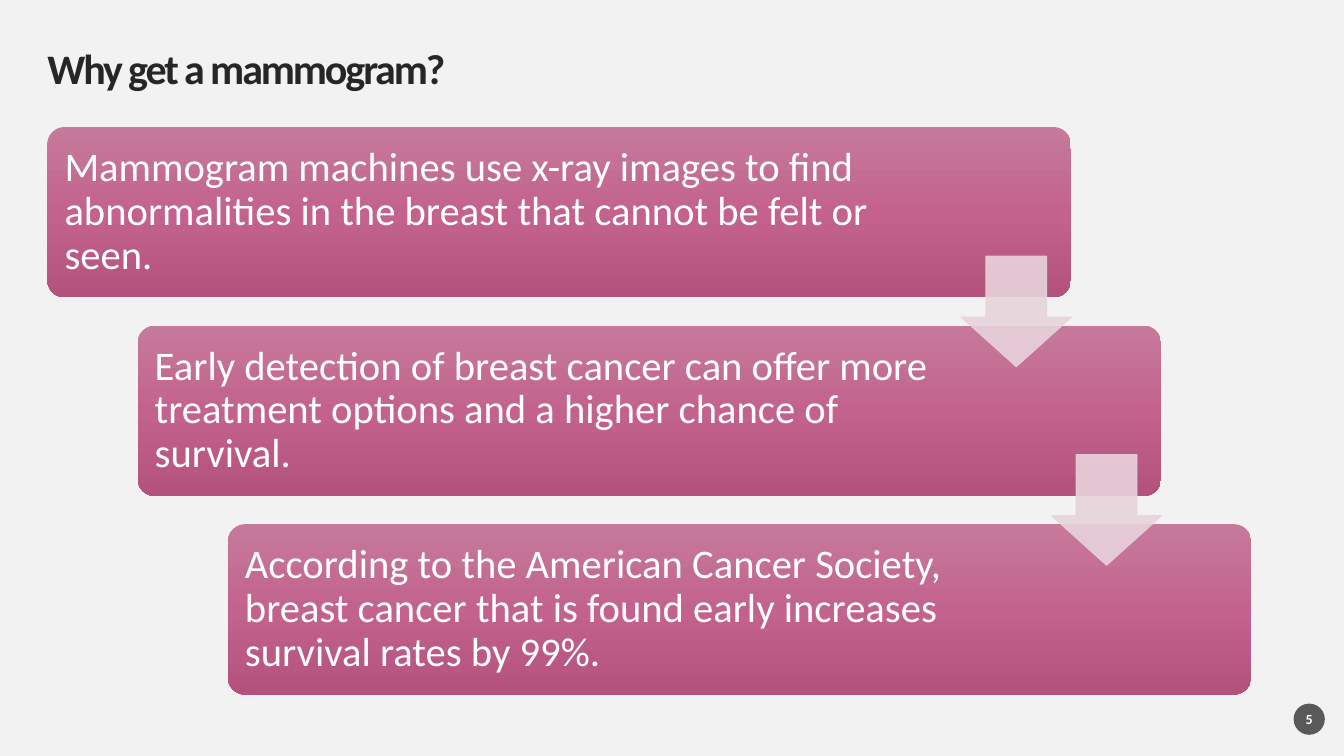
from copy import deepcopy

from pptx import Presentation
from pptx.dml.color import RGBColor
from pptx.enum.shapes import MSO_SHAPE
from pptx.enum.text import MSO_ANCHOR, PP_ALIGN
from pptx.oxml.ns import qn
from pptx.oxml.xmlchemy import OxmlElement
from pptx.util import Inches, Pt

TITLE = "Why get a mammogram?"
PAGE_NUMBER = "5"
REASONS = [
    ("Mammogram machines use x-ray images to find abnormalities in the breast "
     "that cannot be felt or seen.", 8.33),
    ("Early detection of breast cancer can offer more treatment options and a "
     "higher chance of survival.", 8.06),
    ("According to the American Cancer Society, breast cancer that is found early "
     "increases survival rates by 99%.", 8.06),
]
COLORS = {
    "background": "F2F2F2", "title": "262626", "badge": "595959", "white": "FFFFFF",
    "card_top": "C67A9B", "card_middle": "C3638D", "card_bottom": "B3537D",
    "arrow": "E8D3DB",
}
CARD_STOPS = [(0, "card_top"), (0.5, "card_middle"), (1, "card_bottom")]
FORMATS = {
    "title": {"size": Pt(30), "bold": True},
    "reason": {"size": Pt(29), "bold": False},
    "badge": {"size": Pt(10), "bold": True},
}
LEFT, TOP = 0.47, 1.26
STEP_X, STEP_Y = 0.895, 1.97
CARD_WIDTH, CARD_HEIGHT = 10.15, 1.69
PADDING, INSET = 0.05, 0.12
ARROW_SIZE, ARROW_X, ARROW_Y = 1.1, 9.06, 1.28
ARROW_OPACITY = 90


def rgb(name):
    """Return the named colour."""
    return RGBColor.from_string(COLORS[name])


def add_preset(shapes, preset, left, top, width, height, adjustments=()):
    """Add a preset shape without shadow or outline."""
    shape = shapes.add_shape(preset, *map(Inches, (left, top, width, height)))
    shape.shadow.inherit = False
    shape.line.fill.background()
    for index, value in enumerate(adjustments):
        shape.adjustments[index] = value
    return shape


def write(shape, text, style, color, inset=0, spacing=None, align=PP_ALIGN.LEFT):
    """Write one formatted paragraph, centred vertically, and return its span."""
    frame = shape.text_frame
    frame_format = {"word_wrap": True, "vertical_anchor": MSO_ANCHOR.MIDDLE}
    for side in ("left", "right", "top", "bottom"):
        frame_format[f"margin_{side}"] = Inches(inset)
    for name, value in frame_format.items():
        setattr(frame, name, value)
    para = frame.paragraphs[0]
    para.alignment = align
    para.line_spacing = spacing
    span = para.add_run()
    span.text = text
    for name, value in {"name": "Calibri", **FORMATS[style]}.items():
        setattr(span.font, name, value)
    span.font.color.rgb = rgb(color)
    return span


def fill_card(card):
    """Give a card its three-stop vertical gradient."""
    card.fill.gradient()
    card.fill.gradient_angle = 270
    stop_list = next(card.element.iter(qn("a:gsLst")))
    stop_list.append(deepcopy(stop_list[-1]))
    for stop, (position, color) in zip(card.fill.gradient_stops, CARD_STOPS):
        stop.position = position
        stop.color.rgb = rgb(color)


def add_reason(shapes, index, text, text_width):
    """Add one card of the staircase with its text."""
    left, top = LEFT + index * STEP_X, TOP + index * STEP_Y
    card = add_preset(shapes, MSO_SHAPE.ROUNDED_RECTANGLE, left, top,
                      CARD_WIDTH, CARD_HEIGHT, [0.1])
    fill_card(card)
    box = shapes.add_textbox(*map(Inches, (left + PADDING, top + PADDING, text_width,
                                           CARD_HEIGHT - 2 * PADDING)))
    write(box, text, "reason", "white", INSET, 0.9)


def add_arrow(shapes, index):
    """Add the translucent arrow from one card to the next."""
    arrow = add_preset(shapes, MSO_SHAPE.DOWN_ARROW, LEFT + ARROW_X + index * STEP_X,
                       TOP + ARROW_Y + index * STEP_Y, ARROW_SIZE, ARROW_SIZE,
                       [0.55, 0.45])
    arrow.line.width = Pt(0.5)
    for fill in (arrow.fill, arrow.line.fill):
        fill.solid()
        fill.fore_color.rgb = rgb("arrow")
    for color in arrow.element.spPr.iter(qn("a:srgbClr")):
        alpha = OxmlElement("a:alpha")
        alpha.set("val", str(ARROW_OPACITY * 1000))
        color.append(alpha)


def main():
    """Build the slide and save the deck."""
    deck = Presentation()
    deck.slide_width, deck.slide_height = Inches(13.33), Inches(7.5)
    page = deck.slides.add_slide(deck.slide_layouts[6])
    page.background.fill.solid()
    page.background.fill.fore_color.rgb = rgb("background")

    title = page.shapes.add_textbox(*map(Inches, (LEFT, 0.47, 12.39, 0.47)))
    span = write(title, TITLE, "title", "title", spacing=0.9)
    span.font._element.set("spc", "-150")

    badge = add_preset(page.shapes, MSO_SHAPE.OVAL, 12.83, 6.98, 0.31, 0.31)
    badge.fill.solid()
    badge.fill.fore_color.rgb = rgb("badge")
    write(badge, PAGE_NUMBER, "badge", "white", align=PP_ALIGN.CENTER)

    staircase = page.shapes.add_group_shape().shapes
    for index, (text, text_width) in enumerate(REASONS):
        add_reason(staircase, index, text, text_width)
    for index in range(len(REASONS) - 1):
        add_arrow(staircase, index)

    deck.save("out.pptx")


if __name__ == "__main__":
    main()
